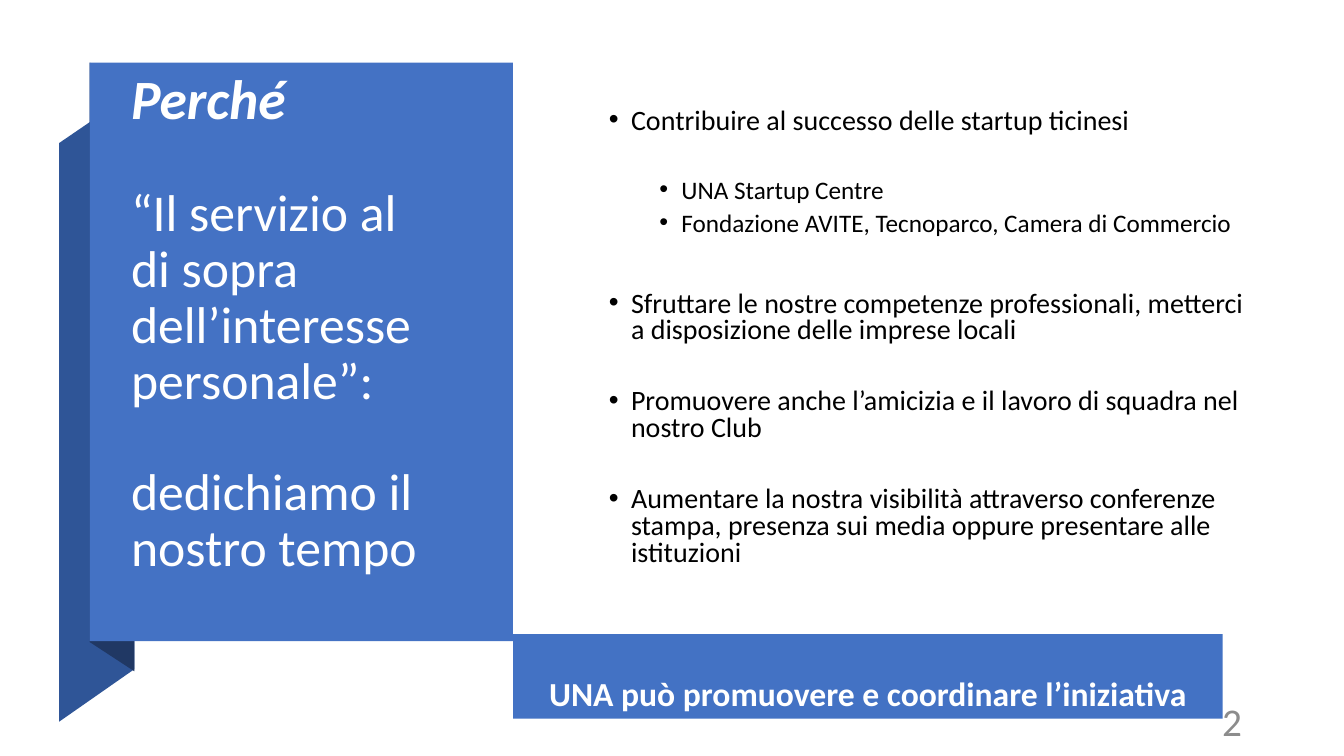
"""Build a slide with a folded blue title panel, a bulleted list and a banner."""
from dataclasses import dataclass

from lxml import etree
from pptx import Presentation
from pptx.dml.color import RGBColor
from pptx.enum.shapes import MSO_SHAPE
from pptx.enum.text import MSO_ANCHOR, MSO_AUTO_SIZE, PP_ALIGN
from pptx.oxml.ns import qn
from pptx.util import Inches, Pt

RECTANGLE = MSO_SHAPE.RECTANGLE
MIDDLE = MSO_ANCHOR.MIDDLE
NO_AUTOFIT = MSO_AUTO_SIZE.NONE
LEFT, CENTER, RIGHT = PP_ALIGN.LEFT, PP_ALIGN.CENTER, PP_ALIGN.RIGHT


@dataclass(frozen=True)
class Theme:
    font: str = "Calibri"
    panel: str = "4472C4"
    banner: str = "4372C4"
    ribbon: str = "2F5597"
    fold: str = "203864"
    light: str = "FFFFFF"
    dark: str = "000000"
    muted: str = "8C8C8C"
    heading: float = 39.6
    quote: float = 36.9
    item: float = 20
    subitem: float = 18
    closing: float = 24
    number: float = 28


theme = Theme()
deck = Presentation()
deck.slide_width, deck.slide_height = Inches(13.33), Inches(7.5)
COLUMN, ROW = deck.slide_width / 100, deck.slide_height / 100
slide = deck.slides.add_slide(deck.slide_layouts[1])


def set_frame(box, columns_rows, bottom=0.05, top=0.05):
    """Place a box on the grid and return its prepared text frame."""
    left, top_row, width, height = columns_rows
    box.left, box.width = int(left * COLUMN), int(width * COLUMN)
    box.top, box.height = int(top_row * ROW), int(height * ROW)
    frame = box.text_frame
    frame.word_wrap = True
    frame.auto_size = NO_AUTOFIT
    frame.vertical_anchor = MIDDLE
    frame.margin_top, frame.margin_bottom = Inches(top), Inches(bottom)
    return frame


def add_span(para, text, size, color, bold=False, italic=False):
    """Append one formatted run to a paragraph."""
    span = para.add_run()
    span.text = text
    span.font.name, span.font.size = theme.font, Pt(size)
    span.font.bold, span.font.italic = bold, italic
    span.font.color.rgb = RGBColor.from_string(color)


panel_group = slide.shapes.add_group_shape()
folded_parts = [
    (theme.ribbon, [(4.4, 95.47), (10, 88.53), (10, 12.13), (4.4, 18.93)]),
    (theme.fold, [(6.67, 84.93), (10, 88.8), (10, 12), (6.67, 8.27)]),
]
folded_shapes = []
for color, corners in folded_parts:
    points = [(int(x * COLUMN), int(y * ROW)) for x, y in corners]
    outline = panel_group.shapes.build_freeform(*points[0])
    outline.add_line_segments(points[1:], close=True)
    folded_shapes.append((outline.convert_to_shape(), color))

panel = panel_group.shapes.add_shape(RECTANGLE, 0, 0, 0, 0)
set_frame(panel, (6.67, 8.27, 31.5, 76.53))
banner = slide.shapes.add_shape(RECTANGLE, 0, 0, 0, 0)
for shape, color in [*folded_shapes, (panel, theme.panel), (banner, theme.banner)]:
    shape.shadow.inherit = False
    shape.fill.solid()
    shape.fill.fore_color.rgb = RGBColor.from_string(color)
    shape.line.fill.background()

title = slide.shapes.title
title_frame = set_frame(title, (9, 12.93, 26.48, 67.47), bottom=0.61)
title_blocks = [
    (["Perché"], theme.heading, True),
    (["“Il servizio al", "di sopra dell’interesse personale”:"], theme.quote, False),
    (["dedichiamo il nostro tempo"], theme.quote, False),
]
for index, (lines, size, emphasis) in enumerate(title_blocks):
    para = title_frame.add_paragraph() if index else title_frame.paragraphs[0]
    para.alignment, para.line_spacing = LEFT, 0.9
    para.space_before = Pt(40 if index else 0)
    for number, line in enumerate(lines):
        if number:
            para.add_line_break()
        add_span(para, line, size, theme.light, emphasis, emphasis)

body = slide.placeholders[1]
body_frame = set_frame(body, (40.8, 12.93, 53.55, 67.33), bottom=0.32)
items = [
    (0, 6, "Contribuire al successo delle startup ticinesi"),
    (1, 31.5, "UNA Startup Centre"),
    (1, 6, "Fondazione AVITE, Tecnoparco, Camera di Commercio"),
    (0, 39, "Sfruttare le nostre competenze professionali, "
            "metterci a disposizione delle imprese locali"),
    (0, 31.5, "Promuovere anche l’amicizia e il lavoro di squadra nel nostro Club"),
    (0, 31.5, "Aumentare la nostra visibilità attraverso conferenze stampa, "
              "presenza sui media oppure presentare alle istituzioni"),
]
for index, (level, gap, text) in enumerate(items):
    para = body_frame.add_paragraph() if index else body_frame.paragraphs[0]
    para.level, para.alignment = level, LEFT
    para.line_spacing, para.space_before = 0.8, Pt(gap)
    properties = para._p.get_or_add_pPr()
    properties.set("marL", str(Inches(0.72 + 0.5 * level)))
    properties.set("indent", str(Inches(-0.22)))
    etree.SubElement(properties, qn("a:buFont")).set("typeface", "Arial")
    etree.SubElement(properties, qn("a:buChar")).set("char", "•")
    add_span(para, text, theme.subitem if level else theme.item, theme.dark)

for placeholder in (title, body):
    slide.shapes._spTree.append(placeholder._element)
slide.shapes._spTree.append(banner._element)

number_box = slide.shapes.add_textbox(0, 0, 0, 0)
captions = [
    (banner, (38.18, 83.87, 52.8, 11.2), 0.39, CENTER,
     "UNA può promuovere e coordinare l’iniziativa", theme.closing, theme.light, True),
    (number_box, (70.65, 92.67, 22.5, 5.33), 0.05, RIGHT,
     "2", theme.number, theme.muted, False),
]
for box, place, top, alignment, text, size, color, bold in captions:
    para = set_frame(box, place, top=top).paragraphs[0]
    para.alignment = alignment
    add_span(para, text, size, color, bold)

deck.save("out.pptx")
